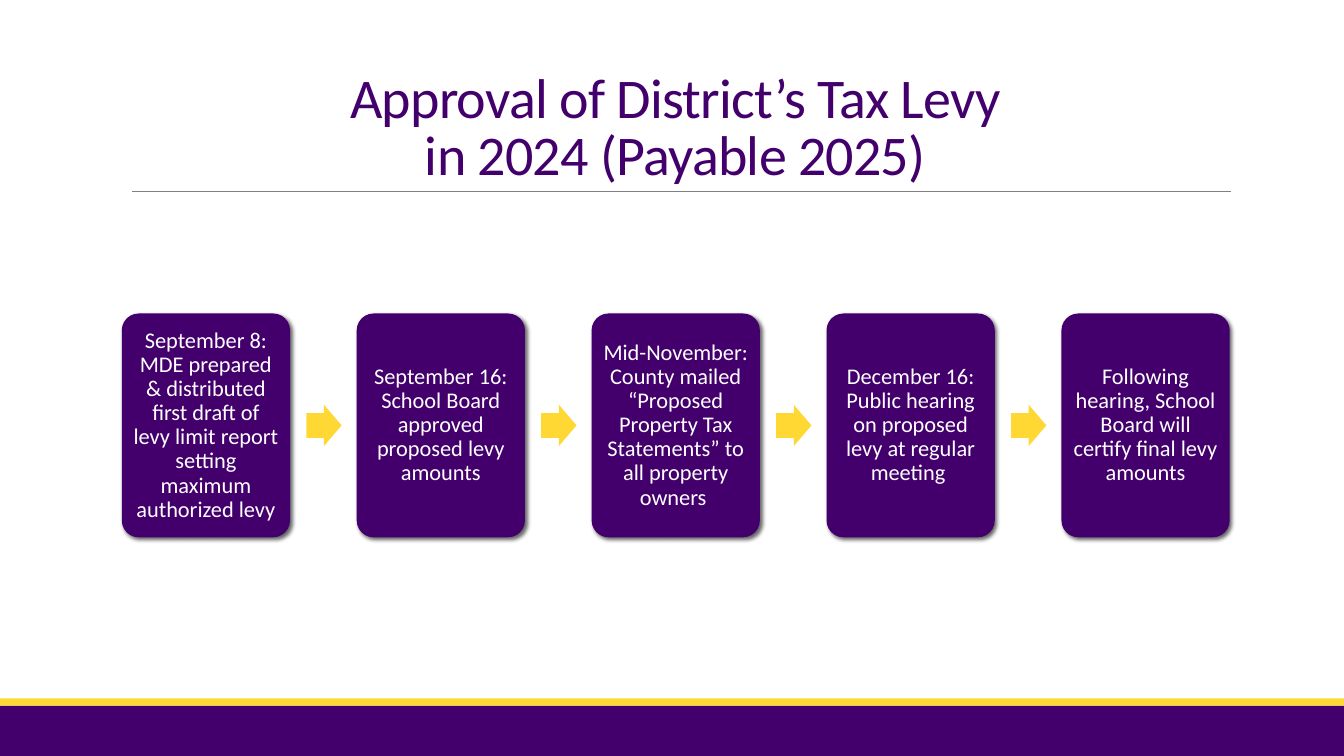
from dataclasses import dataclass

from lxml import etree
from pptx import Presentation
from pptx.dml.color import RGBColor
from pptx.enum.shapes import MSO_CONNECTOR, MSO_SHAPE
from pptx.enum.text import MSO_ANCHOR, PP_ALIGN
from pptx.oxml import parse_xml
from pptx.oxml.ns import qn
from pptx.shapes.autoshape import Shape
from pptx.slide import Slide
from pptx.text.text import _Paragraph as Paragraph
from pptx.util import Cm, Pt

PURPLE = RGBColor(0x43, 0x00, 0x6C)
YELLOW = RGBColor(0xFF, 0xD8, 0x33)
GRAY = RGBColor(0x80, 0x80, 0x80)
WHITE = RGBColor(0xFF, 0xFF, 0xFF)

RECTANGLE = MSO_SHAPE.RECTANGLE
ROUNDED = MSO_SHAPE.ROUNDED_RECTANGLE
ARROW = MSO_SHAPE.RIGHT_ARROW
STRAIGHT = MSO_CONNECTOR.STRAIGHT
CENTER = PP_ALIGN.CENTER
MIDDLE = MSO_ANCHOR.MIDDLE
BOTTOM = MSO_ANCHOR.BOTTOM

FONT = "Calibri"
SLIDE_WIDTH, SLIDE_HEIGHT = 33.87, 19.05
CARD_LEFT, CARD_TOP, CARD_WIDTH, CARD_HEIGHT = 3.07, 7.9, 4.24, 5.64
CARD_PITCH = 5.92
ARROW_OFFSET, ARROW_WIDTH, ARROW_HEIGHT = 4.65, 0.89, 1.04
CARD_INSET = 0.17

TITLE_LINES = ["Approval of District’s Tax Levy", "in 2024 (Payable 2025)"]
STEPS = [
    "September 8: MDE prepared & distributed first draft of levy limit report "
    "setting maximum authorized levy",
    "September 16: School Board approved proposed levy amounts",
    "Mid-November: County mailed “Proposed Property Tax Statements” to all "
    "property owners ",
    "December 16: Public hearing on proposed levy at regular meeting ",
    "Following hearing, School Board will certify final levy amounts",
]
CARD_SHADOW = (
    '<a:outerShdw xmlns:a="http://schemas.openxmlformats.org/drawingml/2006/main" '
    'blurRad="38100" dist="25400" dir="2700000" algn="ctr" rotWithShape="0">'
    '<a:srgbClr val="000000"><a:alpha val="60000"/></a:srgbClr></a:outerShdw>'
)


@dataclass
class Box:
    left: float
    top: float
    width: float
    height: float


def add_block(slide: Slide, kind: MSO_SHAPE, box: Box, color: RGBColor) -> Shape:
    shape = slide.shapes.add_shape(
        kind, Cm(box.left), Cm(box.top), Cm(box.width), Cm(box.height)
    )
    shape.fill.solid()
    shape.fill.fore_color.rgb = color
    shape.line.fill.background()
    shape.shadow.inherit = False
    return shape


def style_paragraph(
    paragraph: Paragraph, size: float, color: RGBColor, spacing: float
) -> None:
    paragraph.alignment = CENTER
    paragraph.line_spacing = spacing
    paragraph.font.name = FONT
    paragraph.font.size = Pt(size)
    paragraph.font.color.rgb = color


def add_footer(slide: Slide) -> None:
    add_block(slide, RECTANGLE, Box(0, 17.78, SLIDE_WIDTH, 1.27), PURPLE)
    add_block(slide, RECTANGLE, Box(0, 17.6, SLIDE_WIDTH, 0.18), YELLOW)


def add_title(slide: Slide) -> None:
    rule = slide.shapes.add_connector(STRAIGHT, Cm(3.33), Cm(4.83), Cm(31.01), Cm(4.83))
    rule.line.color.rgb = GRAY
    rule.line.width = Pt(0.5)
    etree.SubElement(rule._element.spPr, qn("a:effectLst"))

    title = slide.shapes.add_textbox(Cm(3.05), Cm(0.79), Cm(27.94), Cm(4.04))
    frame = title.text_frame
    frame.word_wrap = True
    frame.vertical_anchor = BOTTOM
    paragraph = frame.paragraphs[0]
    style_paragraph(paragraph, 40, PURPLE, 0.85)
    for index, line in enumerate(TITLE_LINES):
        if index:
            paragraph.add_line_break()
        run = paragraph.add_run()
        run.text = line
        run.font._element.set("spc", "-50")


def add_card(slide: Slide, left: float, text: str) -> None:
    box = Box(left, CARD_TOP, CARD_WIDTH, CARD_HEIGHT)
    card = add_block(slide, ROUNDED, box, PURPLE)
    card.adjustments[0] = 0.1
    effects = card._element.spPr.find(qn("a:effectLst"))
    effects.append(parse_xml(CARD_SHADOW))
    frame = card.text_frame
    frame.word_wrap = True
    frame.vertical_anchor = MIDDLE
    frame.margin_left = frame.margin_right = Cm(CARD_INSET)
    frame.margin_top = frame.margin_bottom = Cm(CARD_INSET)
    paragraph = frame.paragraphs[0]
    paragraph.text = text
    style_paragraph(paragraph, 16, WHITE, 0.9)


def add_arrow(slide: Slide, left: float) -> None:
    top = CARD_TOP + (CARD_HEIGHT - ARROW_HEIGHT) / 2
    arrow = add_block(slide, ARROW, Box(left, top, ARROW_WIDTH, ARROW_HEIGHT), YELLOW)
    arrow.adjustments[0] = 0.6
    arrow.adjustments[1] = 0.5


def main() -> None:
    presentation = Presentation()
    presentation.slide_width = Cm(SLIDE_WIDTH)
    presentation.slide_height = Cm(SLIDE_HEIGHT)
    slide = presentation.slides.add_slide(presentation.slide_layouts[6])
    add_footer(slide)
    add_title(slide)
    for index, step in enumerate(STEPS):
        left = CARD_LEFT + index * CARD_PITCH
        add_card(slide, left, step)
        if index < len(STEPS) - 1:
            add_arrow(slide, left + ARROW_OFFSET)
    presentation.save("out.pptx")


if __name__ == "__main__":
    main()
